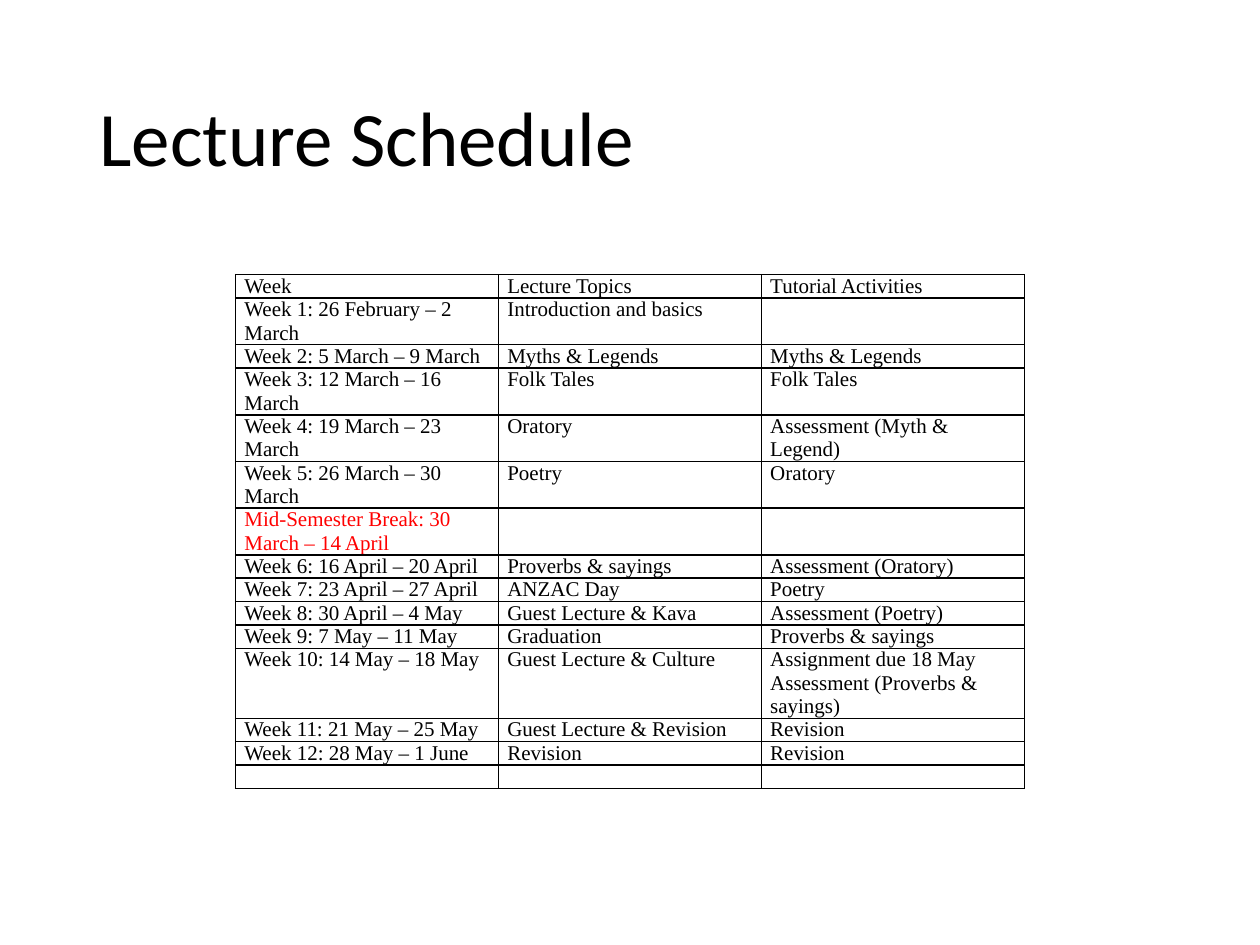
from lxml import etree
from pptx import Presentation
from pptx.dml.color import RGBColor
from pptx.enum.text import MSO_ANCHOR, PP_ALIGN
from pptx.oxml.ns import qn
from pptx.util import Inches, Pt

LEFT, MIDDLE = PP_ALIGN.LEFT, MSO_ANCHOR.MIDDLE
BLACK = RGBColor(0, 0, 0)
RED = RGBColor(255, 0, 0)
BREAK = "Mid-Semester Break: 30 March – 14 April"
ROWS = [
    ("Week", "Lecture Topics", "Tutorial Activities"),
    ("Week 1: 26 February – 2 March", "Introduction and basics", ""),
    ("Week 2: 5 March – 9 March", "Myths & Legends", "Myths & Legends"),
    ("Week 3: 12 March – 16 March", "Folk Tales", "Folk Tales"),
    ("Week 4: 19 March – 23 March", "Oratory", "Assessment (Myth & Legend)"),
    ("Week 5: 26 March – 30 March", "Poetry", "Oratory"),
    (BREAK, "", ""),
    ("Week 6: 16 April – 20 April", "Proverbs & sayings", "Assessment (Oratory)"),
    ("Week 7: 23 April – 27 April", "ANZAC Day", "Poetry"),
    ("Week 8: 30 April – 4 May", "Guest Lecture & Kava", "Assessment (Poetry)"),
    ("Week 9: 7 May – 11 May", "Graduation", "Proverbs & sayings"),
    ("Week 10: 14 May – 18 May", "Guest Lecture & Culture",
     "Assignment due 18 May\nAssessment (Proverbs & sayings)"),
    ("Week 11: 21 May – 25 May", "Guest Lecture & Revision", "Revision"),
    ("Week 12: 28 May – 1 June", "Revision", "Revision"),
    ("", "", ""),
]


def style(para, face, size, color):
    """Set the font of a paragraph."""
    para.font.name = face
    para.font.size = Pt(size)
    para.font.color.rgb = color


def add_title(slide, text, left, top, width, height):
    """Place the title placeholder in the given box."""
    title = slide.shapes.title
    title.left, title.top, title.width, title.height = left, top, width, height
    frame = title.text_frame
    frame.text = text
    frame.vertical_anchor = MIDDLE
    para = frame.paragraphs[0]
    para.alignment = LEFT
    para.line_spacing = 0.9
    style(para, "Calibri", 44, BLACK)


def add_edges(cell):
    """Draw a thin black line on each side of a cell."""
    props = cell._tc.get_or_add_tcPr()
    for side in ("a:lnL", "a:lnR", "a:lnT", "a:lnB"):
        line = etree.SubElement(props, qn(side), w=str(Pt(1)))
        fill = etree.SubElement(line, qn("a:solidFill"))
        etree.SubElement(fill, qn("a:srgbClr"), val=str(BLACK))


def fill_cell(cell, text):
    """Write and format one cell of the schedule."""
    cell.margin_left = cell.margin_right = Inches(0.07)
    cell.margin_top = cell.margin_bottom = 0
    add_edges(cell)
    cell.fill.background()
    cell.text = text
    for para in cell.text_frame.paragraphs:
        style(para, "Times New Roman", 12, RED if text == BREAK else BLACK)
        if not text:
            para._p.get_or_add_endParaRPr().set("sz", "1200")


def add_schedule(slide, rows, left, top, width, height):
    """Place the schedule table in the given box."""
    count = len(rows[0])
    table = slide.shapes.add_table(
        len(rows), count, left, top, width, height).table
    table.first_row = table.horz_banding = False
    for col in table.columns:
        col.width = width // count
    for r, row in enumerate(rows):
        for c, text in enumerate(row):
            fill_cell(table.cell(r, c), text)


def main():
    """Build and save the slide."""
    deck = Presentation()
    deck.slide_width, deck.slide_height = Inches(10), Inches(7.5)
    slide = deck.slides.add_slide(deck.slide_layouts[5])
    add_title(slide, "Lecture Schedule",
              Inches(0.69), Inches(0.4), Inches(8.62), Inches(1.45))
    add_schedule(slide, ROWS, Inches(1.87), Inches(2.18),
                 Inches(6.26), Inches(0.18) * len(ROWS))
    deck.save("out.pptx")


if __name__ == "__main__":
    main()
